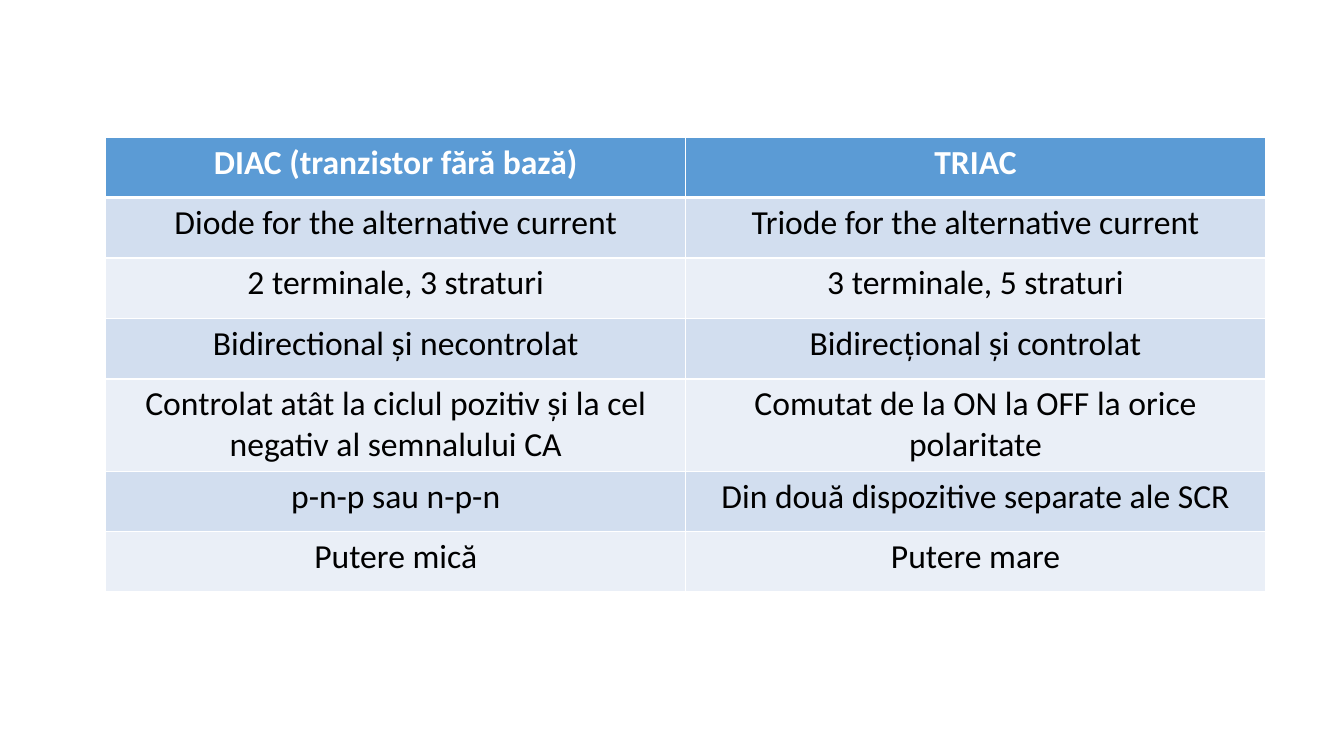
from lxml.etree import SubElement
from pptx import Presentation
from pptx.dml.color import RGBColor
from pptx.enum.text import PP_ALIGN as Align
from pptx.oxml.ns import qn
from pptx.util import Inches, Pt

WHITE = RGBColor(0xFF, 0xFF, 0xFF)
BLACK = RGBColor(0x00, 0x00, 0x00)
HEADER_BLUE = RGBColor(0x5B, 0x9B, 0xD5)
BAND_DARK = RGBColor(0xD2, 0xDE, 0xEF)
BAND_LIGHT = RGBColor(0xEA, 0xEF, 0xF7)

COMPARISON = [
    ("DIAC (tranzistor fără bază)", "TRIAC"),
    ("Diode for the alternative current", "Triode for the alternative current"),
    ("2 terminale, 3 straturi", "3 terminale, 5 straturi"),
    ("Bidirectional și necontrolat", "Bidirecțional și controlat"),
    ("Controlat atât la ciclul pozitiv și la cel negativ al semnalului CA",
     "Comutat de la ON la OFF la orice polaritate"),
    ("p-n-p sau n-p-n", "Din două dispozitive separate ale SCR"),
    ("Putere mică", "Putere mare"),
]


class SlideBuilder:
    """Holds the text style and the current slide, and adds elements to it."""

    def __init__(self, page, font_name, font_size):
        self.page = page
        self.font_name = font_name
        self.font_size = Pt(font_size)

    def table(self, rows, left, top, column_width, row_height):
        columns = len(rows[0])
        frame = self.page.shapes.add_table(
            len(rows), columns, Inches(left), Inches(top),
            Inches(column_width * columns), Inches(row_height * len(rows)))
        for row_index, texts in enumerate(rows):
            for column_index, text in enumerate(texts):
                cell = frame.table.cell(row_index, column_index)
                self.borders(cell, row_index)
                self.cell(cell, text, row_index)

    def cell(self, cell, text, row_index):
        is_header = row_index == 0
        band = BAND_DARK if row_index % 2 else BAND_LIGHT
        cell.fill.solid()
        cell.fill.fore_color.rgb = HEADER_BLUE if is_header else band
        cell.text_frame.text = text
        para = cell.text_frame.paragraphs[0]
        para.alignment = Align.CENTER
        for span in para.runs:
            span.font.name = self.font_name
            span.font.size = self.font_size
            span.font.bold = is_header
            span.font.color.rgb = WHITE if is_header else BLACK

    def borders(self, cell, row_index):
        widths = {
            "L": 1,
            "R": 1,
            "T": 3 if row_index == 1 else 1,
            "B": 3 if row_index == 0 else 1,
        }
        properties = cell._tc.get_or_add_tcPr()
        for side, width in widths.items():
            line = SubElement(properties, qn(f"a:ln{side}"), w=str(Pt(width)))
            fill = SubElement(line, qn("a:solidFill"))
            SubElement(fill, qn("a:srgbClr"), val=str(WHITE))


def main():
    deck = Presentation()
    deck.slide_width = Inches(13.33)
    deck.slide_height = Inches(7.5)
    page = deck.slides.add_slide(deck.slide_layouts[6])
    builder = SlideBuilder(page, "Calibri", 24)
    builder.table(COMPARISON, left=1.05, top=1.36, column_width=5.75, row_height=0.6)
    deck.save("out.pptx")


if __name__ == "__main__":
    main()
